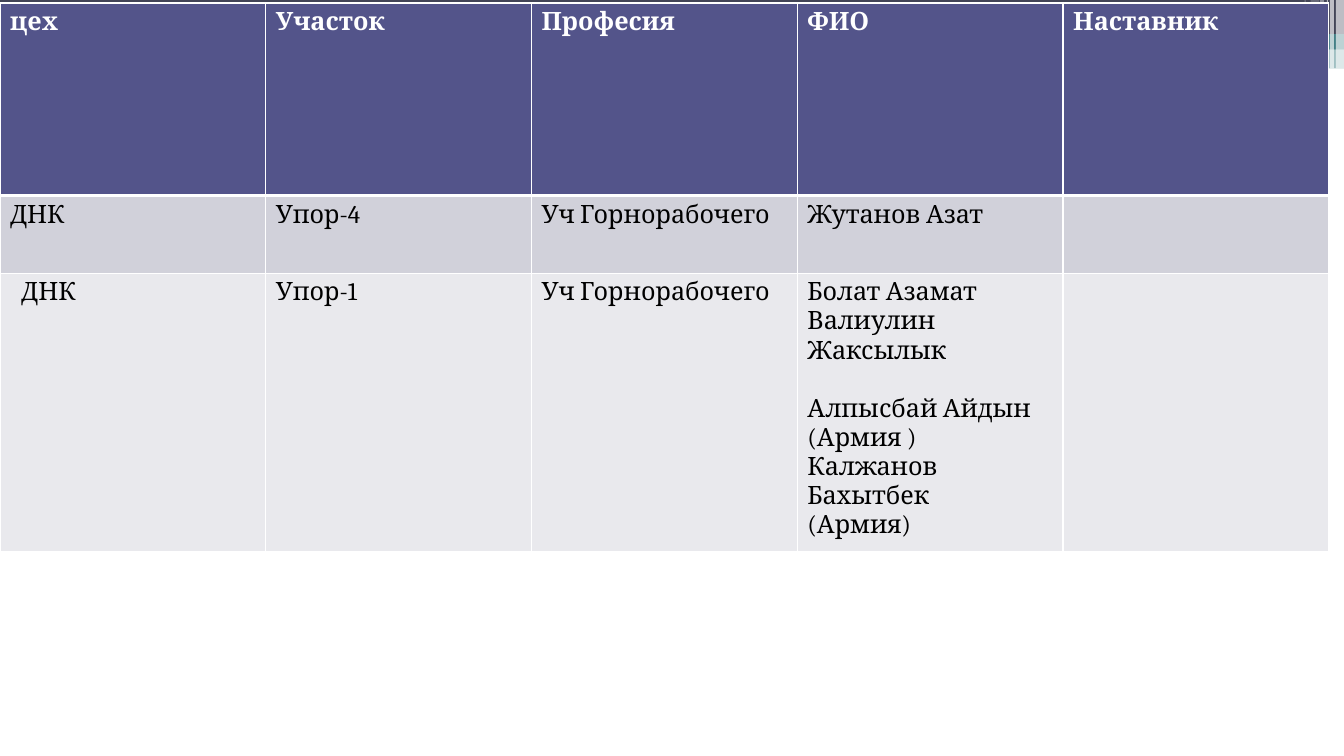
from lxml.etree import SubElement
from pptx import Presentation
from pptx.dml.color import RGBColor
from pptx.enum.shapes import MSO_SHAPE
from pptx.oxml.ns import qn
from pptx.util import Inches, Pt

WHITE, BLACK, TEAL, SLATE = "FFFFFF", "000000", "438086", "424456"
HEADER, BAND_DARK, BAND_LIGHT = "53548A", "D1D1DA", "E9E9ED"

# left, top, width, height, colour, opacity in percent
BANDS = [
    (0, 0.4, 13.33, 0.09, TEAL, 50),
    (0, 0, 13.33, 0.34, SLATE, 100),
    (0, 0.34, 13.33, 0.1, TEAL, 100),
    (7.89, 0.39, 5.44, 0.1, TEAL, 100),
    (7.89, 0.48, 5.44, 0.2, TEAL, 50),
]
# left, width, height, opacity in percent
STRIPES = [
    (13.25, 0.08, 0.68, 65),
    (13.19, 0.04, 0.68, 65),
    (13.16, 0.01, 0.68, 60),
    (13.09, 0.04, 0.68, 40),
    (13, 0.08, 0.64, 20),
    (12.94, 0.01, 0.64, 30),
]
STAFF = [
    ["цех", "Участок", "Професия", "ФИО", "Наставник"],
    ["ДНК", "Упор-4", "Уч Горнорабочего", "Жутанов Азат", ""],
    ["ДНК", "Упор-1", "Уч Горнорабочего",
     "Болат Азамат\nВалиулин Жаксылык\nАлпысбай Айдын (Армия )\n"
     "Калжанов Бахытбек\n(Армия)", ""],
]
ROW_HEIGHTS = [1.91, 0.77, 2.76]
ROW_FILLS = [HEADER, BAND_DARK, BAND_LIGHT]


def rgb(color):
    return RGBColor.from_string(color)


class SlideBuilder:
    font, size = "Cambria", 18

    def __init__(self, slide):
        self.s = slide

    def band(self, left, top, width, height, color, opacity=100):
        sp = self.s.shapes.add_shape(MSO_SHAPE.RECTANGLE, Inches(left), Inches(top),
                                     Inches(width), Inches(height))
        sp.shadow.inherit = False
        sp.line.fill.background()
        sp.fill.solid()
        sp.fill.fore_color.rgb = rgb(color)
        if opacity < 100:
            clr = sp.fill._xPr.find(qn("a:solidFill"))[0]
            SubElement(clr, qn("a:alpha"), val=str(opacity * 1000))

    def table(self, left, top, width, rows, heights, fills):
        cols = len(rows[0])
        table = self.s.shapes.add_table(len(rows), cols, Inches(left), Inches(top),
                                        Inches(width), Inches(sum(heights))).table
        for column in table.columns:
            column.width = Inches(width / cols)
        for i, texts in enumerate(rows):
            table.rows[i].height = Inches(heights[i])
            for j, text in enumerate(texts):
                cell = table.cell(i, j)
                self.borders(cell, top=3 if i == 1 else 1, bottom=3 if i == 0 else 1)
                cell.fill.solid()
                cell.fill.fore_color.rgb = rgb(fills[i])
                self.text(cell.text_frame, text, header=i == 0)
        return table

    def borders(self, cell, top, bottom):
        tcPr = cell._tc.get_or_add_tcPr()
        for side, width in (("L", 1), ("R", 1), ("T", top), ("B", bottom)):
            ln = SubElement(tcPr, qn(f"a:ln{side}"), w=str(Pt(width)))
            fill = SubElement(ln, qn("a:solidFill"))
            SubElement(fill, qn("a:srgbClr"), val=WHITE)

    def text(self, tf, text, header):
        for k, line in enumerate(text.split("\n")):
            p = tf.paragraphs[0] if k == 0 else tf.add_paragraph()
            p.font.size = Pt(self.size)
            if line:
                r = p.add_run()
                r.text = line
                r.font.name = self.font
                r.font.size = Pt(self.size)
                r.font.bold = header
                r.font.color.rgb = rgb(WHITE if header else BLACK)


def main():
    prs = Presentation()
    prs.slide_width, prs.slide_height = Inches(13.33), Inches(7.5)
    builder = SlideBuilder(prs.slides.add_slide(prs.slide_layouts[6]))
    for band in BANDS:
        builder.band(*band)
    for left, width, height, opacity in STRIPES:
        builder.band(left, 0, width, height, WHITE, opacity)
    staff = builder.table(0, 0.03, 13.18, STAFF, ROW_HEIGHTS, ROW_FILLS)
    staff.cell(2, 0).margin_left = Inches(0.21)
    # One line of space parts the third name from those above
    staff.cell(2, 3).text_frame.paragraphs[2].space_before = Pt(21)
    prs.save("out.pptx")


if __name__ == "__main__":
    main()
